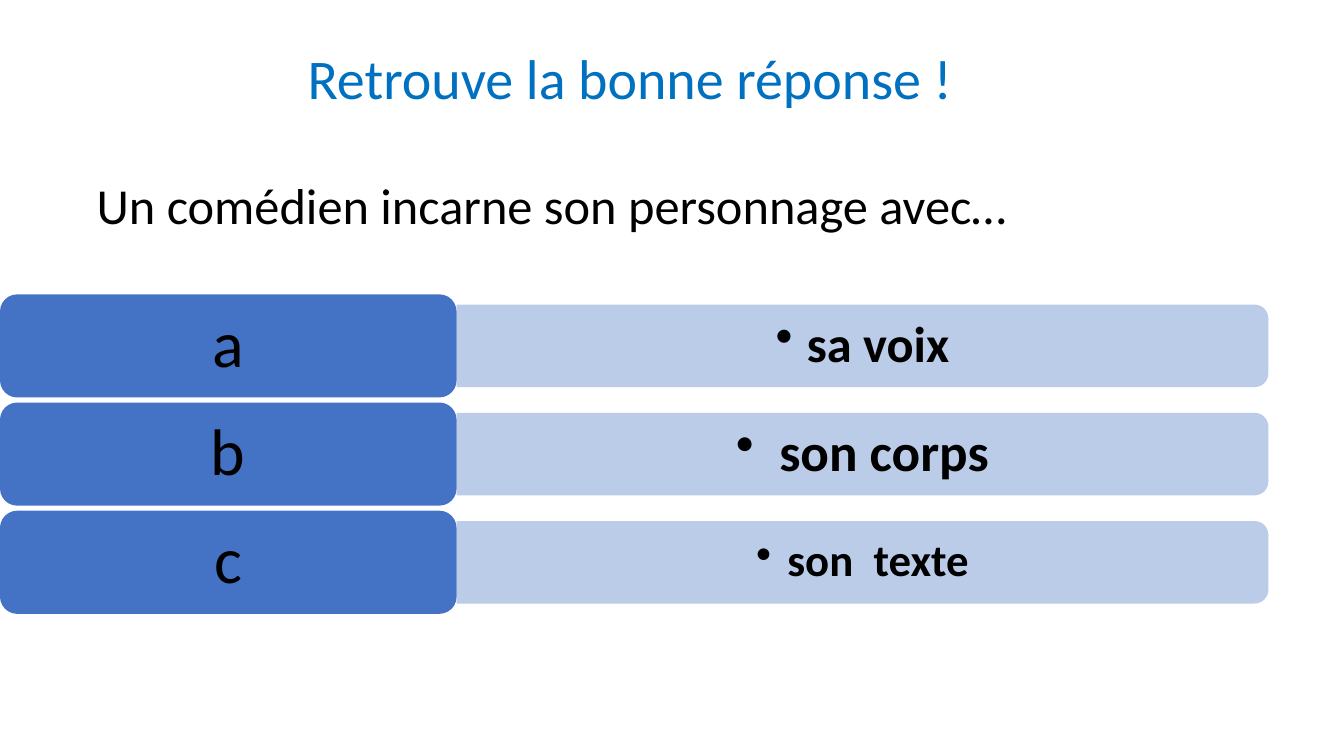
from dataclasses import dataclass

from lxml import etree
from pptx import Presentation
from pptx.dml.color import RGBColor
from pptx.enum.shapes import MSO_SHAPE as Shape
from pptx.enum.text import MSO_ANCHOR as Anchor, MSO_AUTO_SIZE as AutoSize, PP_ALIGN as Align
from pptx.oxml.ns import qn
from pptx.util import Inches, Pt


@dataclass(frozen=True)
class Theme:
    font: str = "Calibri"
    title_color: str = "0070C0"
    text_color: str = "000000"
    label_fill: str = "4472C4"
    bar_fill: str = "B4C7E7"
    bar_opacity: int = 90
    title_size: int = 40
    question_size: int = 36
    letter_size: int = 47


@dataclass(frozen=True)
class Box:
    left: float
    top: float
    width: float
    height: float

    def emu(self):
        return [Inches(v) for v in (self.left, self.top, self.width, self.height)]

    def row(self, index, count, gap):
        height = (self.height - gap * (count - 1)) / count
        return Box(self.left, self.top + index * (height + gap), self.width, height)


THEME = Theme()
SLIDE_WIDTH, SLIDE_HEIGHT = 13.33, 7.5
TITLE_BOX = Box(1.76, 0.38, 9.1, 0.77)
QUESTION_BOX = Box(0.86, 1.68, 12.01, 0.71)
ANSWERS_BOX = Box(0, 2.92, 12.58, 3.17)
ROW_GAP = 0.05
LABEL_SHARE = 0.36  # share of a row's width
BAR_SHARE = 0.8  # share of a row's height
ANSWERS = [("a", "sa voix", 36), ("b", " son corps", 38), ("c", "son  texte", 32)]


def write(shape, text, size, color=THEME.text_color, bold=False, align=Align.CENTER,
          anchor=Anchor.MIDDLE, insets=(0.1, 0.05)):
    frame = shape.text_frame
    frame.word_wrap = True
    frame.auto_size = AutoSize.NONE
    frame.vertical_anchor = anchor
    frame.margin_left = frame.margin_right = Inches(insets[0])
    frame.margin_top = frame.margin_bottom = Inches(insets[1])
    paragraph = frame.paragraphs[0]
    paragraph.text = text
    paragraph.alignment = align
    font = paragraph.font
    font.name, font.size, font.bold = THEME.font, Pt(size), bold
    font.color.rgb = RGBColor.from_string(color)
    return paragraph


def add_bullet(paragraph, indent):
    properties = paragraph._p.get_or_add_pPr()
    properties.set("marL", str(Inches(indent)))
    properties.set("indent", str(-Inches(indent)))
    bullet = etree.Element(qn("a:buChar"), char="•")
    properties.find(qn("a:defRPr")).addprevious(bullet)


def add_filled(slide, kind, box, color):
    shape = slide.shapes.add_shape(kind, *box.emu())
    shape.shadow.inherit = False
    shape.fill.solid()
    shape.fill.fore_color.rgb = RGBColor.from_string(color)
    shape.line.fill.background()
    return shape


def add_title(slide, box):
    title = slide.shapes.title
    title.left, title.top, title.width, title.height = box.emu()
    write(title, "Retrouve la bonne réponse ! ", THEME.title_size, THEME.title_color,
          anchor=Anchor.TOP)


def add_question(slide, box):
    write(slide.shapes.add_textbox(*box.emu()), "Un comédien incarne son personnage avec…",
          THEME.question_size, align=Align.LEFT, anchor=Anchor.TOP)


def add_answer(slide, box, letter, answer, size):
    label_width = box.width * LABEL_SHARE
    bar_width, bar_height = box.width - label_width, box.height * BAR_SHARE
    bar_left = box.left + label_width
    center_x, center_y = bar_left + bar_width / 2, box.top + box.height / 2

    # Bar: turned a quarter so that its rounded corners face right
    upright = Box(center_x - bar_height / 2, center_y - bar_width / 2, bar_height, bar_width)
    bar = add_filled(slide, Shape.ROUND_2_SAME_RECTANGLE, upright, THEME.bar_fill)
    bar.rotation = 90
    color = bar.fill._xPr.find(".//" + qn("a:srgbClr"))
    etree.SubElement(color, qn("a:alpha"), val=str(THEME.bar_opacity * 1000))

    # Answer text
    text_box = Box(bar_left, center_y - bar_height / 2, bar_width, bar_height)
    paragraph = write(slide.shapes.add_textbox(*text_box.emu()), answer, size, bold=True,
                      insets=(0.27, 0.14))
    paragraph.line_spacing = 0.9
    add_bullet(paragraph, 0.31)

    # Letter label
    label_box = Box(box.left, box.top, label_width, box.height)
    label = add_filled(slide, Shape.ROUNDED_RECTANGLE, label_box, THEME.label_fill)
    write(label, letter, THEME.letter_size, insets=(0.25, 0.15)).line_spacing = 0.9


def add_answers(slide, box):
    for index, answer in enumerate(ANSWERS):
        add_answer(slide, box.row(index, len(ANSWERS), ROW_GAP), *answer)


def main():
    presentation = Presentation()
    presentation.slide_width = Inches(SLIDE_WIDTH)
    presentation.slide_height = Inches(SLIDE_HEIGHT)
    slide = presentation.slides.add_slide(presentation.slide_layouts.get_by_name("Title Only"))
    add_title(slide, TITLE_BOX)
    add_question(slide, QUESTION_BOX)
    add_answers(slide, ANSWERS_BOX)
    presentation.save("out.pptx")


if __name__ == "__main__":
    main()
